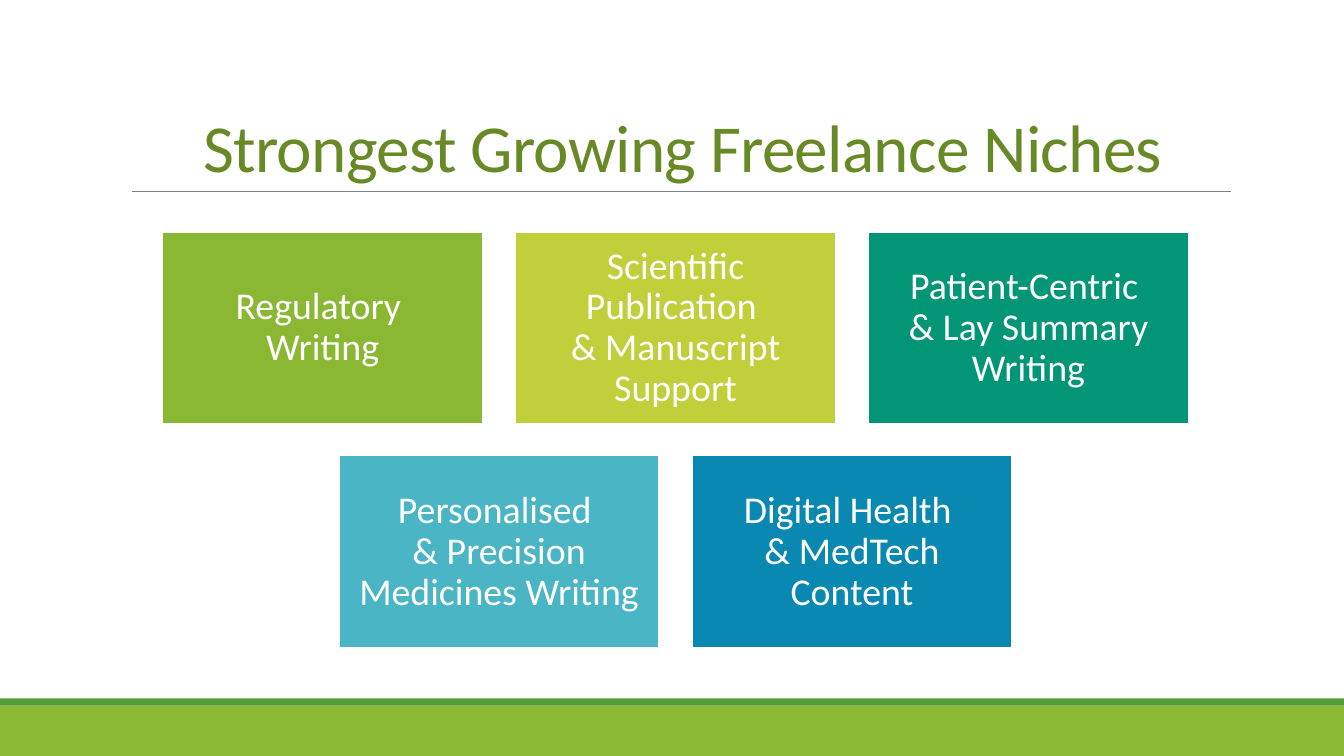
from pptx import Presentation
from pptx.dml.color import RGBColor
from pptx.enum import shapes, text
from pptx.oxml import xmlchemy
from pptx.util import Inches, Pt

WHITE = RGBColor(0xFF, 0xFF, 0xFF)
GREY = RGBColor(0x80, 0x80, 0x80)
OLIVE = RGBColor(0x67, 0x8A, 0x26)
GREEN = RGBColor(0x54, 0x9E, 0x39)
LEAF = RGBColor(0x8A, 0xB8, 0x33)
LIME = RGBColor(0xC0, 0xCF, 0x3A)
TEAL = RGBColor(0x02, 0x96, 0x76)
AQUA = RGBColor(0x4A, 0xB5, 0xC4)
BLUE = RGBColor(0x09, 0x89, 0xB1)

SLIDE_WIDTH, SLIDE_HEIGHT = 13.33, 7.5
CARD_WIDTH, CARD_HEIGHT = 3.18, 1.91
PITCH_X, PITCH_Y = 3.5, 2.22
CARDS_CENTRE, CARDS_TOP = 6.7, 2.3

NICHE_ROWS = [
    [
        (LEAF, ["Regulatory ", "Writing"]),
        (LIME, ["Scientific Publication ", "& Manuscript Support"]),
        (TEAL, ["Patient-Centric ", "& Lay Summary Writing"]),
    ],
    [
        (AQUA, ["Personalised ", "& Precision Medicines Writing"]),
        (BLUE, ["Digital Health ", "& MedTech Content"]),
    ],
]


def add_rectangle(slide, left, top, width, height, colour):
    rectangle = slide.shapes.add_shape(
        shapes.MSO_SHAPE.RECTANGLE,
        Inches(left), Inches(top), Inches(width), Inches(height))
    rectangle.shadow.inherit = False
    rectangle.fill.solid()
    rectangle.fill.fore_color.rgb = colour
    rectangle.line.fill.background()
    return rectangle


def add_run(paragraph, words, size, colour):
    run = paragraph.add_run()
    run.text = words
    run.font.name = "Calibri"
    run.font.size = Pt(size)
    run.font.color.rgb = colour
    return run


def add_title(slide, words):
    title = slide.shapes.title
    title.left, title.top = Inches(1.2), Inches(0.31)
    title.width, title.height = Inches(11), Inches(1.59)
    frame = title.text_frame
    frame.auto_size = text.MSO_AUTO_SIZE.NONE
    frame.vertical_anchor = text.MSO_ANCHOR.BOTTOM
    paragraph = frame.paragraphs[0]
    paragraph.alignment = text.PP_ALIGN.CENTER
    paragraph.line_spacing = 0.85
    run = add_run(paragraph, words, 48, OLIVE)
    run.font._element.set("spc", "-50")


def add_title_rule(slide):
    rule = slide.shapes.add_connector(
        shapes.MSO_CONNECTOR.STRAIGHT,
        Inches(1.31), Inches(1.9), Inches(12.21), Inches(1.9))
    rule.line.color.rgb = GREY
    rule.line.width = Pt(0.5)
    properties = rule._element.spPr
    properties.append(xmlchemy.OxmlElement("a:effectLst"))


def add_niche_card(slide, left, top, colour, lines):
    card = add_rectangle(slide, left, top, CARD_WIDTH, CARD_HEIGHT, colour)
    card.line.color.rgb = WHITE
    card.line.width = Pt(1.25)
    frame = card.text_frame
    frame.word_wrap = True
    frame.vertical_anchor = text.MSO_ANCHOR.MIDDLE
    frame.margin_left = frame.margin_right = Inches(0.11)
    frame.margin_top = frame.margin_bottom = Inches(0.11)
    paragraph = frame.paragraphs[0]
    paragraph.alignment = text.PP_ALIGN.CENTER
    paragraph.line_spacing = 0.9
    for number, line in enumerate(lines):
        if number:
            paragraph.add_line_break()
        add_run(paragraph, line, 27, WHITE)


def add_niches(slide):
    """Lay out the cards in rows, each row centred."""
    for row, niches in enumerate(NICHE_ROWS):
        row_width = PITCH_X * (len(niches) - 1) + CARD_WIDTH
        row_left = CARDS_CENTRE - row_width / 2
        for column, (colour, lines) in enumerate(niches):
            add_niche_card(slide, row_left + column * PITCH_X,
                           CARDS_TOP + row * PITCH_Y, colour, lines)


def main():
    deck = Presentation()
    deck.slide_width = Inches(SLIDE_WIDTH)
    deck.slide_height = Inches(SLIDE_HEIGHT)
    slide = deck.slides.add_slide(deck.slide_layouts[5])
    add_rectangle(slide, 0, 7, SLIDE_WIDTH, 0.5, LEAF)
    add_rectangle(slide, 0, 6.93, SLIDE_WIDTH, 0.07, GREEN)
    add_title_rule(slide)
    add_title(slide, " Strongest Growing Freelance Niches")
    add_niches(slide)
    deck.save("out.pptx")


if __name__ == "__main__":
    main()
